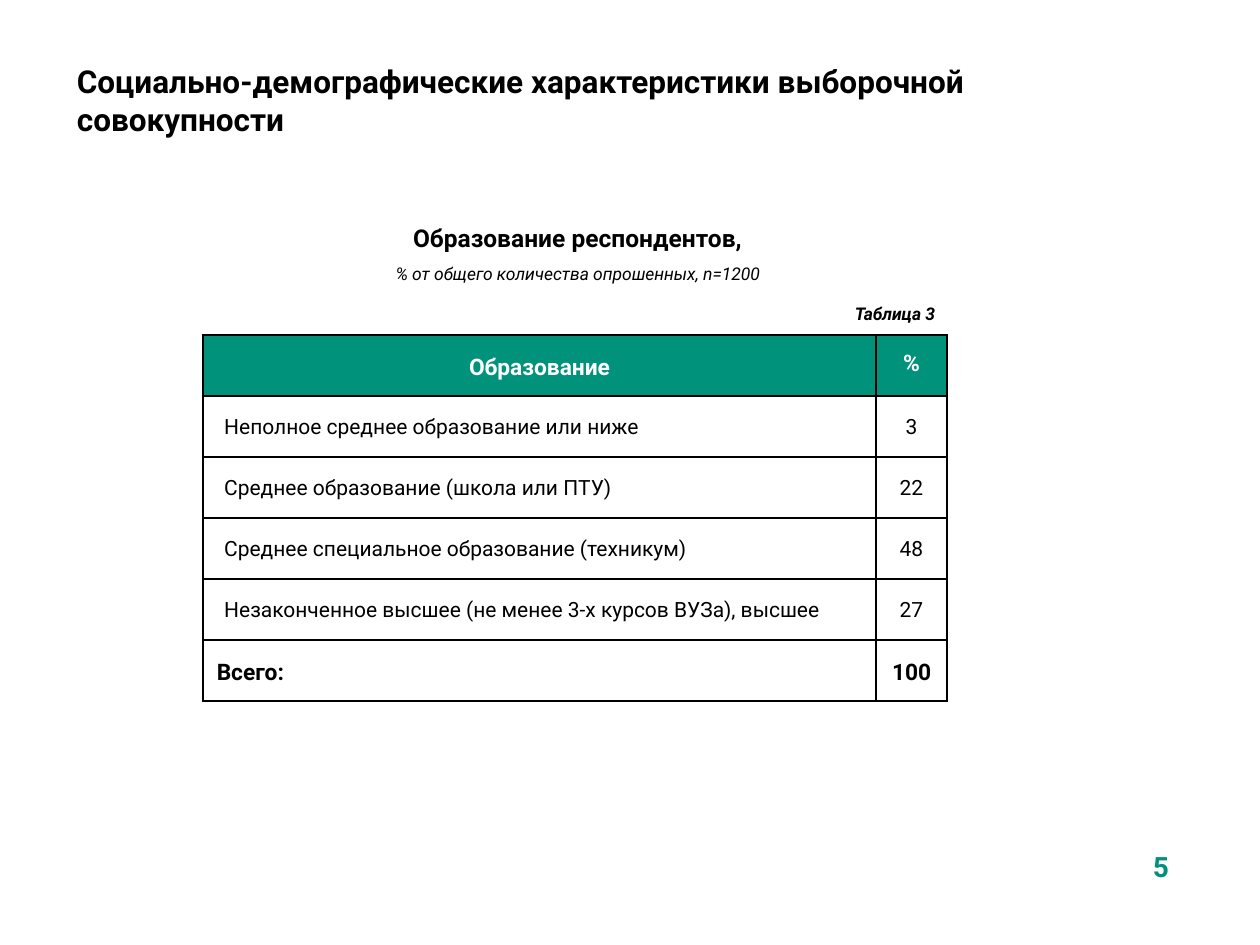
"""Builds the slide on the education of the survey respondents."""
from dataclasses import dataclass

from lxml import etree
from pptx import Presentation
from pptx import util as u
from pptx.dml.color import RGBColor
from pptx.enum import text
from pptx.oxml import ns

ALIGN = text.PP_ALIGN
ANCHOR = text.MSO_ANCHOR


@dataclass(frozen=True)
class Theme:
    font: str = "Roboto"
    ink: str = "000000"
    paper: str = "FFFFFF"
    accent: str = "00927B"
    title: int = 18
    page: int = 16
    heading: int = 14
    table_head: int = 13
    table_body: int = 12
    note: int = 10
    border: int = 1


THEME = Theme()


@dataclass(frozen=True)
class Line:
    wording: str
    size: int
    color: str = THEME.ink
    bold: bool = False
    italic: bool = False
    align: ALIGN = ALIGN.LEFT
    before: float = 0
    spacing: float = 1.0


@dataclass(frozen=True)
class Block:
    left: float
    top: float
    width: float
    height: float
    lines: tuple[Line, ...]
    anchor: ANCHOR = ANCHOR.TOP


@dataclass(frozen=True)
class Cell:
    line: Line
    margins: tuple[float, float, float, float]
    fill: str = THEME.paper


HEAD_MARGINS = (0.28, 0.13, 0.28, 0.13)
LABEL_MARGINS = (0.43, 0.02, 0.02, 0)
SHARE_MARGINS = (0.02, 0.02, 0.02, 0)

BLOCKS = (
    Block(1.3, 1.12, 21, 1.8, (
        Line("Социально-демографические характеристики выборочной совокупности",
             THEME.title, bold=True),
    ), ANCHOR.MIDDLE),
    Block(3.2, 4.37, 16.89, 1.47, (
        Line("Образование респондентов,", THEME.heading, bold=True,
             align=ALIGN.CENTER),
        Line("% от общего количества опрошенных, n=1200", THEME.note,
             italic=True, align=ALIGN.CENTER, before=6),
    )),
    Block(16.89, 5.97, 2.21, 0.69, (
        Line("Таблица 3", THEME.note, bold=True, italic=True, align=ALIGN.RIGHT),
    ), ANCHOR.BOTTOM),
    Block(22.3, 17, 2.21, 1.32, (
        Line("5", THEME.page, THEME.accent, bold=True, align=ALIGN.CENTER),
    )),
)

EDUCATION = (
    ("Неполное среднее образование или ниже", 3),
    ("Среднее образование (школа или ПТУ)", 22),
    ("Среднее специальное образование (техникум)", 48),
    ("Незаконченное высшее (не менее 3-х курсов ВУЗа), высшее", 27),
)
TABLE_LEFT, TABLE_TOP = 4.09, 6.75
COLUMN_WIDTHS = (13.57, 1.43)
ROW_HEIGHT = 1.23


def write_lines(frame, lines: tuple[Line, ...]) -> None:
    """Fill a text frame with styled paragraphs."""
    for index, line in enumerate(lines):
        paragraph = frame.add_paragraph() if index else frame.paragraphs[0]
        paragraph.text = line.wording
        paragraph.alignment = line.align
        paragraph.line_spacing = line.spacing
        paragraph.space_before = u.Pt(line.before)
        font = paragraph.font
        font.name, font.size = THEME.font, u.Pt(line.size)
        font.bold, font.italic = line.bold, line.italic
        font.color.rgb = RGBColor.from_string(line.color)


def draw_block(slide, block: Block) -> None:
    """Add one wrapped text box."""
    frame = slide.shapes.add_textbox(
        u.Cm(block.left), u.Cm(block.top),
        u.Cm(block.width), u.Cm(block.height)).text_frame
    frame.word_wrap = True
    frame.vertical_anchor = block.anchor
    write_lines(frame, block.lines)


def draw_borders(cell) -> None:
    """Outline all four sides of a table cell."""
    properties = cell._tc.get_or_add_tcPr()
    for side in ("lnL", "lnR", "lnT", "lnB"):
        edge = etree.SubElement(properties, ns.qn(f"a:{side}"),
                                w=str(u.Pt(THEME.border)))
        solid = etree.SubElement(edge, ns.qn("a:solidFill"))
        etree.SubElement(solid, ns.qn("a:srgbClr"), val=THEME.ink)


def draw_cell(cell, content: Cell) -> None:
    """Style and fill one table cell."""
    draw_borders(cell)
    cell.fill.solid()
    cell.fill.fore_color.rgb = RGBColor.from_string(content.fill)
    cell.vertical_anchor = ANCHOR.MIDDLE
    (cell.margin_left, cell.margin_top,
     cell.margin_right, cell.margin_bottom) = map(u.Cm, content.margins)
    write_lines(cell.text_frame, (content.line,))


def strong_cell(wording: str, color: str, fill: str,
                align: ALIGN = ALIGN.CENTER, spacing: float = 1.2) -> Cell:
    """Describe a bold cell of the header or total row."""
    line = Line(wording, THEME.table_head, color, bold=True, align=align,
                spacing=spacing)
    return Cell(line, HEAD_MARGINS, fill)


def table_rows() -> list[tuple[Cell, Cell]]:
    """Describe the header, the education levels and their total."""
    header = (strong_cell("Образование", THEME.paper, THEME.accent),
              strong_cell("%", THEME.paper, THEME.accent, spacing=0.8))
    levels = [(Cell(Line(level, THEME.table_body), LABEL_MARGINS),
               Cell(Line(str(share), THEME.table_body, align=ALIGN.CENTER),
                    SHARE_MARGINS))
              for level, share in EDUCATION]
    total = sum(share for _, share in EDUCATION)
    footer = (strong_cell("Всего:", THEME.ink, THEME.paper, ALIGN.LEFT),
              strong_cell(str(total), THEME.ink, THEME.paper))
    return [header, *levels, footer]


def draw_table(slide, rows: list[tuple[Cell, Cell]]) -> None:
    """Add the education table."""
    table = slide.shapes.add_table(
        len(rows), len(COLUMN_WIDTHS), u.Cm(TABLE_LEFT), u.Cm(TABLE_TOP),
        u.Cm(sum(COLUMN_WIDTHS)), u.Cm(ROW_HEIGHT * len(rows))).table
    table.first_row = table.horz_banding = False
    for column, width in zip(table.columns, COLUMN_WIDTHS):
        column.width = u.Cm(width)
    for table_row, contents in zip(table.rows, rows):
        table_row.height = u.Cm(ROW_HEIGHT)
        for cell, content in zip(table_row.cells, contents):
            draw_cell(cell, content)


def main() -> None:
    """Build and save the slide."""
    deck = Presentation()
    deck.slide_width, deck.slide_height = u.Cm(25.4), u.Cm(19.05)
    slide = deck.slides.add_slide(deck.slide_layouts[6])
    for block in BLOCKS:
        draw_block(slide, block)
    draw_table(slide, table_rows())
    deck.save("out.pptx")


if __name__ == "__main__":
    main()
